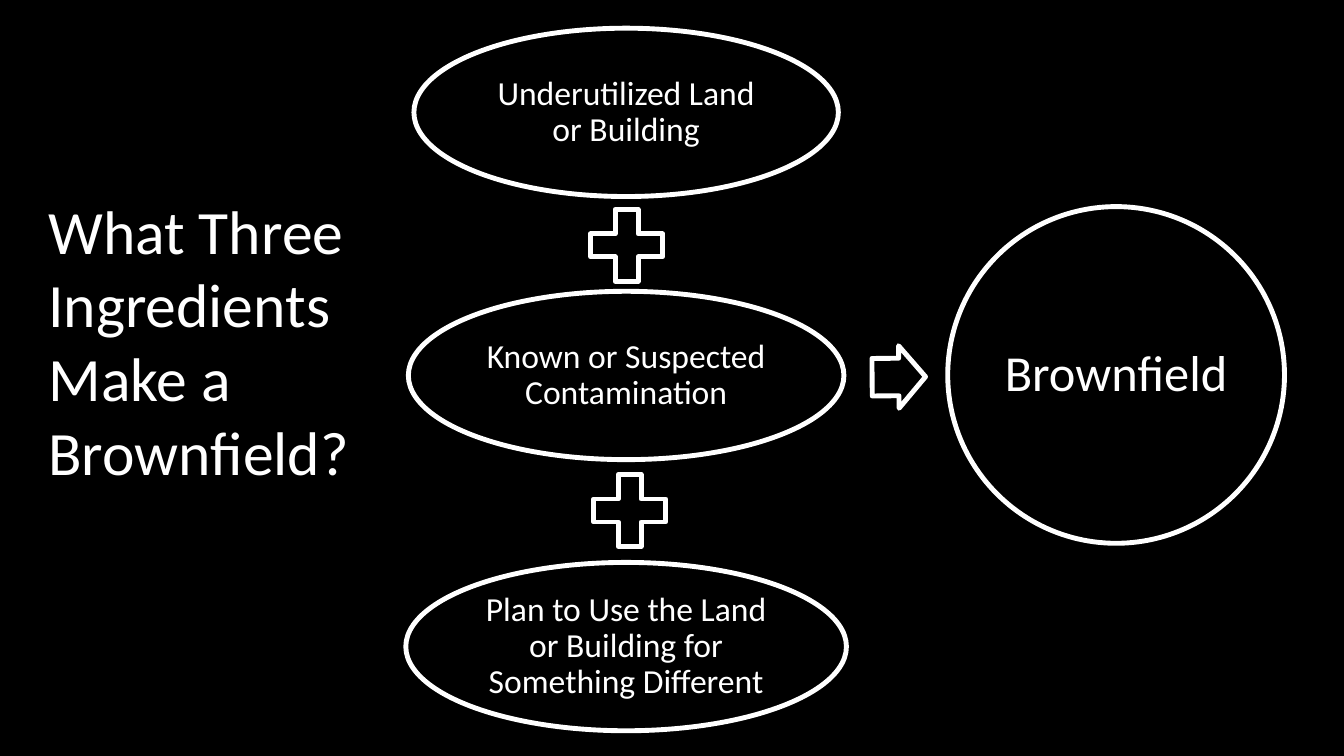
import pptx
import pptx.util
import pptx.dml.color
import pptx.enum.shapes
import pptx.enum.text

Inches, Pt = pptx.util.Inches, pptx.util.Pt
SHAPE = pptx.enum.shapes.MSO_SHAPE
ANCHOR = pptx.enum.text.MSO_ANCHOR
ALIGN = pptx.enum.text.PP_ALIGN

COLORS = {"background": "000000", "ink": "FFFFFF"}
INK = pptx.dml.color.RGBColor.from_string(COLORS["ink"])
INGREDIENT_CENTER = 6.21
INGREDIENT_HEIGHT = 1.67
PLUS_SIZE = 0.97

deck = pptx.Presentation()
deck.slide_width, deck.slide_height = Inches(13.33), Inches(7.5)
slide = deck.slides.add_slide(deck.slide_layouts[5])
slide.background.fill.solid()
slide.background.fill.fore_color.rgb = pptx.dml.color.RGBColor.from_string(COLORS["background"])


def write(frame, text, size, align, spacing):
    frame.text = text
    frame.word_wrap = True
    paragraph = frame.paragraphs[0]
    paragraph.alignment = align
    paragraph.line_spacing = spacing
    font = paragraph.runs[0].font
    font.name, font.size, font.color.rgb = "Calibri", Pt(size), INK


def add_outline(kind, left, top, width, height, text="", size=24, inset=0.03):
    """Add an unfilled white-edged shape, with centred text if any is given."""
    outline = slide.shapes.add_shape(kind, Inches(left), Inches(top), Inches(width), Inches(height))
    outline.shadow.inherit = False
    outline.fill.background()
    outline.line.color.rgb = INK
    outline.line.width = Pt(3.5)
    if text:
        frame = outline.text_frame
        write(frame, text, size, ALIGN.CENTER, 0.9)
        frame.vertical_anchor = ANCHOR.MIDDLE
        frame.margin_left = frame.margin_right = Inches(inset)
        frame.margin_top = frame.margin_bottom = Inches(inset)
    return outline


# Question on the left
question = slide.shapes.title
question.left, question.top = Inches(0.38), Inches(1.86)
question.width, question.height = Inches(3.43), Inches(3.06)
write(question.text_frame, "What Three Ingredients Make a Brownfield?", 44, ALIGN.LEFT, 1.0)
question.text_frame.vertical_anchor = ANCHOR.TOP
question.text_frame.auto_size = pptx.enum.text.MSO_AUTO_SIZE.NONE

# Ingredients, joined by plus signs
ingredients = [
    ("Underutilized Land or Building", 0.28, 4.21),
    ("Known or Suspected Contamination", 2.89, 4.32),
    ("Plan to Use the Land or Building for Something Different", 5.58, 4.37),
]
for text, top, width in ingredients:
    add_outline(SHAPE.OVAL, INGREDIENT_CENTER - width / 2, top, width, INGREDIENT_HEIGHT, text)
for left, top in [(5.73, 1.95), (5.76, 4.58)]:
    add_outline(SHAPE.MATH_PLUS, left, top, PLUS_SIZE, PLUS_SIZE)

# Result
arrow = add_outline(SHAPE.RIGHT_ARROW, 8.65, 3.43, 0.53, 0.62)
arrow.adjustments[0], arrow.adjustments[1] = 0.6, 0.5
arrow.rotation = 359.5
add_outline(SHAPE.OVAL, 9.4, 2.05, 3.34, 3.34, "Brownfield", size=36, inset=0.05)

deck.save("out.pptx")
